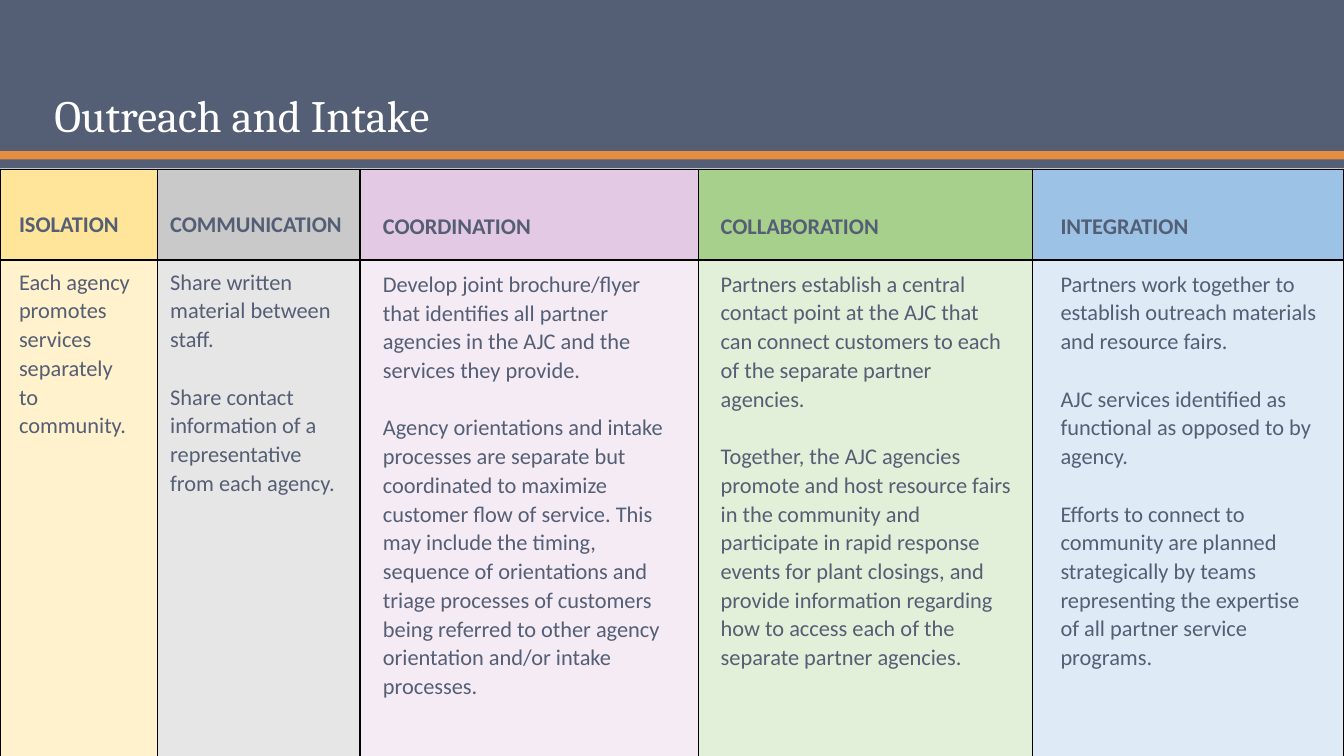
from lxml import etree
from pptx import Presentation
from pptx import util as u
from pptx.dml.color import RGBColor
from pptx.enum import shapes, text
from pptx.oxml.ns import qn

SLATE = RGBColor(0x54, 0x5E, 0x74)
ORANGE = RGBColor(0xE3, 0x8E, 0x41)
WHITE = RGBColor(0xFF, 0xFF, 0xFF)
BLACK = RGBColor(0, 0, 0)
GOLD, CREAM = RGBColor(0xFF, 0xE5, 0x99), RGBColor(0xFF, 0xF2, 0xCC)
GREY, SILVER = RGBColor(0xC9, 0xC9, 0xC9), RGBColor(0xE7, 0xE6, 0xE6)
MAUVE, LILAC = RGBColor(0xE3, 0xC9, 0xE3), RGBColor(0xF5, 0xEB, 0xF5)
GREEN, MINT = RGBColor(0xA8, 0xD0, 0x8D), RGBColor(0xE2, 0xEF, 0xD9)
BLUE, SKY = RGBColor(0x9C, 0xC2, 0xE5), RGBColor(0xDE, 0xEA, 0xF6)

WIDE, HIGH = 13.33, 7.5
ROWS = [0.9, 4.94]
GAP = 20.5  # one line of body text, in points

# column width, header fill, body fill, text box (left, top, width, height), heading, paragraphs
STAGES = [
    (1.56, GOLD, CREAM, (0.09, 2.02, 1.32, 4.31), "ISOLATION",
     ["Each agency promotes services separately to community."]),
    (2.01, GREY, SILVER, (1.59, 2.02, 1.96, 4.31), "COMMUNICATION",
     ["Share written material between staff.",
      "Share contact information of a representative from each agency."]),
    (3.36, MAUVE, LILAC, (3.7, 2.04, 3.1, 4.31), "COORDINATION",
     ["Develop joint brochure/flyer that identifies all partner agencies in the AJC "
      "and the services they provide.",
      "Agency orientations and intake processes are separate but coordinated to "
      "maximize customer flow of service. This may include the timing, sequence of "
      "orientations and triage processes of customers being referred to other agency "
      "orientation and/or intake processes."]),
    (3.31, GREEN, MINT, (7.05, 2.04, 3.11, 5.1), "COLLABORATION",
     ["Partners establish a central contact point at the AJC that can connect "
      "customers to each of the separate partner agencies.",
      "Together, the AJC agencies promote and host resource fairs in the community "
      "and participate in rapid response events for plant closings, and provide "
      "information regarding how to access each of the separate partner agencies."]),
    (3.09, BLUE, SKY, (10.42, 2.04, 2.79, 5.1), "INTEGRATION",
     ["Partners work together to establish outreach materials and resource fairs.",
      "AJC services identified as functional as opposed to by agency.",
      "Efforts to connect to community are planned strategically by teams "
      "representing the expertise of all partner service programs."]),
]


def write(para, words, font="Calibri", size=16, color=SLATE, bold=False, line=1.07, before=0):
    run = para.add_run()
    run.text = words
    run.font.name, run.font.size, run.font.bold = font, u.Pt(size), bold
    run.font.color.rgb = color
    para.line_spacing = line
    para.space_before = u.Pt(before)


def edge(cell, color, width):
    """Draw a solid border on all four sides of a table cell."""
    props = cell._tc.get_or_add_tcPr()
    for side in ("lnL", "lnR", "lnT", "lnB"):
        line = etree.SubElement(props, qn("a:" + side), w=str(u.Pt(width)))
        fill = etree.SubElement(line, qn("a:solidFill"))
        etree.SubElement(fill, qn("a:srgbClr"), val=str(color))


class Deck:
    def __init__(self):
        self.show = Presentation()
        self.show.slide_width = u.Inches(WIDE)
        self.show.slide_height = u.Inches(HIGH)
        self.slide = self.show.slides.add_slide(self.show.slide_layouts[6])

    def band(self, top, height, color):
        shape = self.slide.shapes.add_shape(
            shapes.MSO_SHAPE.RECTANGLE, 0, u.Inches(top), u.Inches(WIDE), u.Inches(height))
        shape.shadow.inherit = False
        shape.fill.solid()
        shape.fill.fore_color.rgb = color
        shape.line.fill.background()

    def box(self, place, anchor=text.MSO_ANCHOR.TOP):
        frame = self.slide.shapes.add_textbox(*map(u.Inches, place)).text_frame
        frame.word_wrap = True
        frame.vertical_anchor = anchor
        return frame

    def grid(self, top, widths, heights, fills):
        table = self.slide.shapes.add_table(
            len(heights), len(widths), 0, u.Inches(top),
            u.Inches(WIDE), u.Inches(sum(heights))).table
        for col, width in zip(table.columns, widths):
            col.width = u.Inches(width)
        for r, height in enumerate(heights):
            table.rows[r].height = u.Inches(height)
            for c, color in enumerate(fills[r]):
                cell = table.cell(r, c)
                edge(cell, BLACK, 1)
                cell.fill.solid()
                cell.fill.fore_color.rgb = color

    def stage(self, place, head, notes):
        frame = self.box(place)
        write(frame.paragraphs[0], head, bold=True)
        for note in notes:
            write(frame.add_paragraph(), note, before=GAP)


def main():
    deck = Deck()
    for top, height, color in [(0, 1.5, SLATE), (1.5, 0.09, ORANGE), (1.58, 0.09, SLATE)]:
        deck.band(top, height, color)
    title = deck.box((0.44, 0.33, 11.48, 1.13), text.MSO_ANCHOR.BOTTOM)
    write(title.paragraphs[0], "Outreach and Intake", font="Cambria", size=32,
          color=WHITE, line=0.9)
    widths, heads, bodies, *_ = zip(*STAGES)
    deck.grid(1.68, widths, ROWS, [heads, bodies])
    for *_, place, head, notes in STAGES:
        deck.stage(place, head, notes)
    deck.show.save("out.pptx")


if __name__ == "__main__":
    main()
